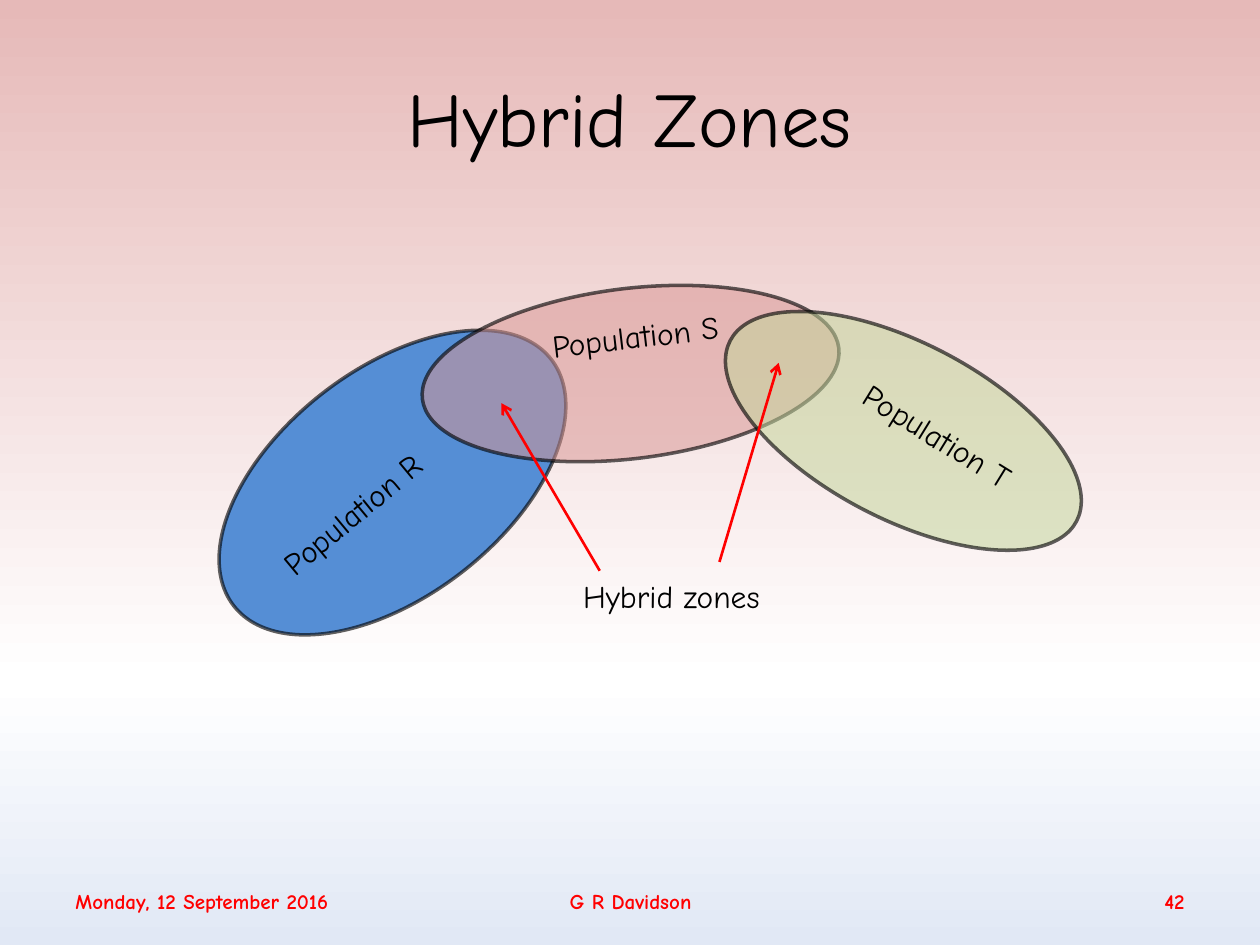
"""Build the Hybrid Zones slide: three overlapping populations and their overlaps."""
import copy

import pptx
import pptx.dml.color
import pptx.enum.shapes
import pptx.enum.text
import pptx.oxml
import pptx.oxml.ns
import pptx.util

Inches = pptx.util.Inches
RGBColor = pptx.dml.color.RGBColor
ALIGN = pptx.enum.text.PP_ALIGN
MIDDLE = pptx.enum.text.MSO_ANCHOR.MIDDLE

FONT = "Comic Neue"
BLACK = RGBColor(0x00, 0x00, 0x00)
RED = RGBColor(0xFF, 0x00, 0x00)
BLUE = RGBColor(0x55, 0x8E, 0xD5)
ROSE = RGBColor(0xD9, 0x96, 0x94)
GREEN = RGBColor(0xC3, 0xD6, 0x9B)
PINK = RGBColor(0xE6, 0xB9, 0xB8)
WHITE = RGBColor(0xFF, 0xFF, 0xFF)
PALE_BLUE = RGBColor(0xE1, 0xE8, 0xF5)


def write(sp, text, size=18, color=BLACK, bold=False, align=ALIGN.LEFT, anchor=None, wrap=True):
    tf = sp.text_frame
    tf.word_wrap = wrap
    tf.vertical_anchor = anchor
    p = tf.paragraphs[0]
    p.alignment = align
    r = p.add_run()
    r.text = text
    r.font.name = FONT
    r.font.size = pptx.util.Pt(size)
    r.font.bold = bold
    r.font.color.rgb = color


def set_alpha(fill, percent):
    clr = fill._xPr.find(".//" + pptx.oxml.ns.qn("a:srgbClr"))
    clr.append(pptx.oxml.parse_xml(
        f'<a:alpha {pptx.oxml.ns.nsdecls("a")} val="{percent * 1000}"/>'))


prs = pptx.Presentation()
prs.slide_width, prs.slide_height = Inches(10), Inches(7.5)
s = prs.slides.add_slide(prs.slide_layouts[5])

bg = s.background.fill
bg.gradient()
bg.gradient_angle = 270
last_stop = s.element.xpath(".//p:bg//a:gs")[-1]
last_stop.addnext(copy.deepcopy(last_stop))
for stop, position, color in zip(bg.gradient_stops, (0, 0.72, 1), (PINK, WHITE, PALE_BLUE)):
    stop.position = position
    stop.color.rgb = color

title = s.shapes.title
title.left, title.top, title.width, title.height = map(Inches, (0.5, 0.3, 9, 1.25))
write(title, "Hybrid Zones", size=44, align=ALIGN.CENTER, anchor=MIDDLE)

for text, left, width, align in (
    ("Monday, 12 September 2016", 0.5, 3.32, ALIGN.LEFT),
    ("G R Davidson", 3.42, 3.17, ALIGN.CENTER),
    ("42", 7.17, 2.33, ALIGN.RIGHT),
):
    sp = s.shapes.add_textbox(Inches(left), Inches(6.95), Inches(width), Inches(0.4))
    write(sp, text, size=12, color=RED, bold=True, align=align, anchor=MIDDLE)

for box, rotation, color, alpha in (
    ((1.52, 2.93, 3.19, 1.8), 322.2, BLUE, 100),
    ((3.34, 2.29, 3.33, 1.35), 353, ROSE, 53),
    ((5.62, 2.72, 3.1, 1.4), 27.5, GREEN, 53),
):
    sp = s.shapes.add_shape(pptx.enum.shapes.MSO_SHAPE.OVAL, *map(Inches, box))
    sp.rotation = rotation
    sp.shadow.inherit = False
    sp.fill.solid()
    sp.fill.fore_color.rgb = color
    if alpha < 100:
        set_alpha(sp.fill, alpha)
    sp.line.width = pptx.util.Pt(2)
    sp.line.color.rgb = BLACK
    set_alpha(sp.line.fill, 61)

for ends in ((5.71, 4.46, 6.18, 2.88), (4.76, 4.53, 3.98, 3.2)):
    arrow = s.shapes.add_connector(pptx.enum.shapes.MSO_CONNECTOR.STRAIGHT, *map(Inches, ends))
    arrow.line.width = pptx.util.Pt(1.5)
    arrow.line.color.rgb = RED
    ln = arrow.line._get_or_add_ln()
    ln.append(pptx.oxml.parse_xml(f'<a:tailEnd {pptx.oxml.ns.nsdecls("a")} type="arrow"/>'))
    ln.addnext(pptx.oxml.parse_xml(f'<a:effectLst {pptx.oxml.ns.nsdecls("a")}/>'))

for text, left, top, width, rotation in (
    ("Hybrid zones", 4.53, 4.53, 1.75, 0),
    ("Population R", 2.02, 3.85, 1.62, 320.3),
    ("Population S", 4.28, 2.46, 1.64, 353.2),
    ("Population T", 6.68, 3.29, 1.63, 31.7),
):
    sp = s.shapes.add_textbox(Inches(left), Inches(top), Inches(width), Inches(0.4))
    sp.rotation = rotation
    write(sp, text, wrap=False)
    sp.text_frame.auto_size = pptx.enum.text.MSO_AUTO_SIZE.SHAPE_TO_FIT_TEXT

prs.save("out.pptx")
